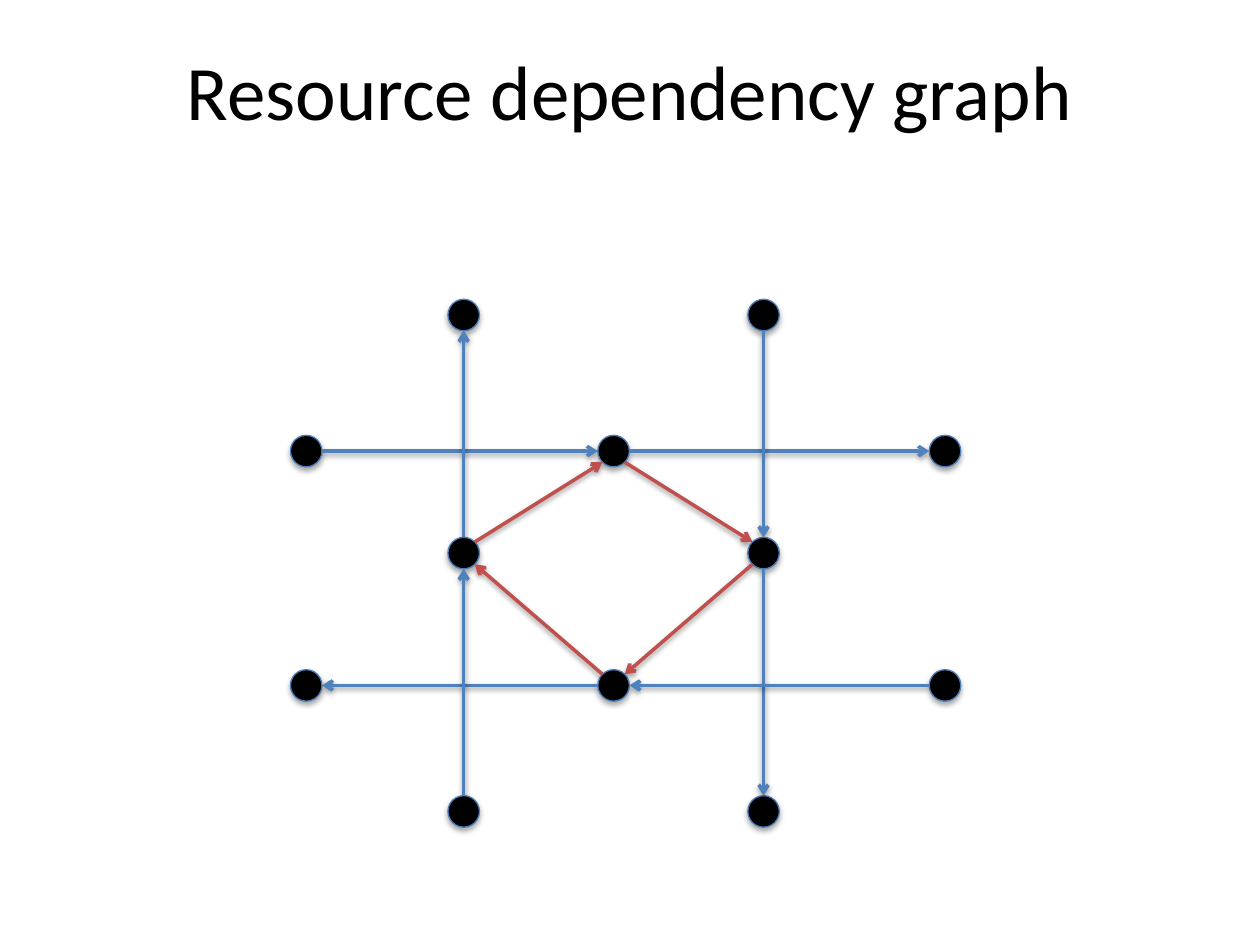
from lxml import etree
from pptx import Presentation
from pptx.dml.color import RGBColor
from pptx.enum.shapes import MSO_CONNECTOR, MSO_SHAPE
from pptx.enum.text import MSO_ANCHOR, PP_ALIGN
from pptx.oxml.ns import qn
from pptx.util import Inches, Pt

STRAIGHT = MSO_CONNECTOR.STRAIGHT
NODE = MSO_SHAPE.FLOWCHART_CONNECTOR
CENTER = PP_ALIGN.CENTER
TOP = MSO_ANCHOR.TOP

COLORS = {"black": "000000", "outline": "4B7EBC", "route": "4F81BD", "cycle": "C0504D"}
COLUMNS = [2.43, 3.68, 4.87, 6.06, 7.5]
ROWS = [2.5, 3.58, 4.39, 5.44, 6.44]
RADIUS = 0.125
DIAGONAL = RADIUS * 0.71

ROUTES = [
    [(0, 1), (2, 1), (4, 1)],
    [(3, 0), (3, 2), (3, 4)],
    [(4, 3), (2, 3), (0, 3)],
    [(1, 4), (1, 2), (1, 0)],
]
CYCLE = [(1, 2), (2, 1), (3, 2), (2, 3), (1, 2)]


def add_shadow(shape, distance, opacity):
    effects = etree.SubElement(shape._element.spPr, qn("a:effectLst"))
    shadow = etree.SubElement(
        effects, qn("a:outerShdw"), blurRad=str(Pt(3.15)), dist=str(Pt(distance)),
        dir="5400000", rotWithShape="0",
    )
    color = etree.SubElement(shadow, qn("a:srgbClr"), val=COLORS["black"])
    etree.SubElement(color, qn("a:alpha"), val=str(opacity * 1000))


def add_arrow(slide, start, end, color):
    x1, y1 = COLUMNS[start[0]], ROWS[start[1]]
    x2, y2 = COLUMNS[end[0]], ROWS[end[1]]
    step_x = (x2 > x1) - (x2 < x1)
    step_y = (y2 > y1) - (y2 < y1)
    reach = DIAGONAL if step_x and step_y else RADIUS
    arrow = slide.shapes.add_connector(
        STRAIGHT,
        Inches(x1 + step_x * reach), Inches(y1 + step_y * reach),
        Inches(x2 - step_x * reach), Inches(y2 - step_y * reach),
    )
    arrow.line.color.rgb = RGBColor.from_string(COLORS[color])
    arrow.line.width = Pt(2)
    etree.SubElement(arrow.line._get_or_add_ln(), qn("a:tailEnd"), type="arrow")
    add_shadow(arrow, 1.6, 38)


presentation = Presentation()
presentation.slide_width = Inches(10)
presentation.slide_height = Inches(7.5)
slide = presentation.slides.add_slide(presentation.slide_layouts[6])

title = slide.shapes.add_textbox(Inches(0.5), Inches(0.3), Inches(9), Inches(1.25))
title.text_frame.word_wrap = True
title.text_frame.vertical_anchor = TOP
paragraph = title.text_frame.paragraphs[0]
paragraph.text = "Resource dependency graph"
paragraph.alignment = CENTER
paragraph.font.name = "Calibri"
paragraph.font.size = Pt(44)
paragraph.font.color.rgb = RGBColor.from_string(COLORS["black"])

for route in ROUTES:
    for column, row in route:
        node = slide.shapes.add_shape(
            NODE, Inches(COLUMNS[column] - RADIUS), Inches(ROWS[row] - RADIUS),
            Inches(2 * RADIUS), Inches(2 * RADIUS),
        )
        node.fill.solid()
        node.fill.fore_color.rgb = RGBColor.from_string(COLORS["black"])
        node.line.color.rgb = RGBColor.from_string(COLORS["outline"])
        node.line.width = Pt(0.75)
        add_shadow(node, 1.8, 35)

for color, chains in (("cycle", [CYCLE]), ("route", ROUTES)):
    for chain in chains:
        for start, end in zip(chain, chain[1:]):
            add_arrow(slide, start, end, color)

presentation.save("out.pptx")
